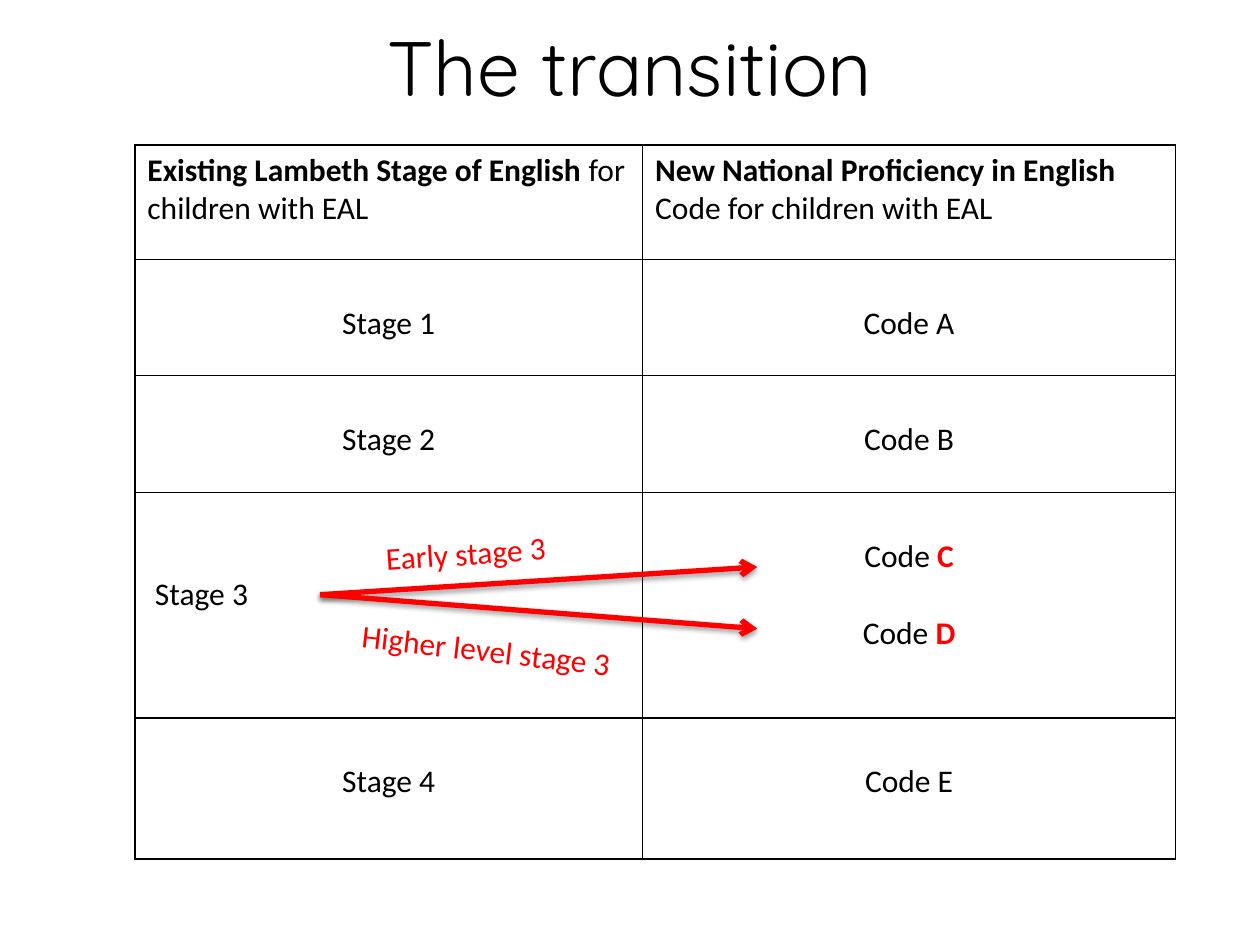
import pptx
import pptx.util
import pptx.oxml
import pptx.oxml.ns
import pptx.dml.color
import pptx.enum.shapes
import pptx.enum.text

Inches, Pt = pptx.util.Inches, pptx.util.Pt
CENTER = pptx.enum.text.PP_ALIGN.CENTER
LEFT = pptx.enum.text.PP_ALIGN.LEFT
COLORS = {"text": "000000", "accent": "FF0000"}
LINE = 0.305  # height of one line of body text, in inches


class Deck:
    def __init__(self, prs):
        self.s = prs.slides.add_slide(prs.slide_layouts[5])
        self.font, self.size = "Calibri", 18

    def xml(self, markup):
        """Parse a fragment whose root still needs the drawing namespace."""
        ns = pptx.oxml.ns.nsdecls("a")
        head, rest = markup.split(">", 1)
        if head.endswith("/"):
            return pptx.oxml.parse_xml(f"{head[:-1]} {ns}/>{rest}")
        return pptx.oxml.parse_xml(f"{head} {ns}>{rest}")

    def run(self, p, text, color="text", bold=False, font=None, size=None):
        r = p.add_run()
        r.text = text
        r.font.name = font or self.font
        r.font.size = Pt(size or self.size)
        r.font.bold = bold
        r.font.color.rgb = pptx.dml.color.RGBColor.from_string(COLORS[color])

    def title(self, text, x, y, w, h):
        sp = self.s.shapes.title
        sp.left, sp.top, sp.width, sp.height = map(Inches, (x, y, w, h))
        tf = sp.text_frame
        tf.vertical_anchor = pptx.enum.text.MSO_ANCHOR.MIDDLE
        tf.paragraphs[0].alignment = CENTER
        self.run(tf.paragraphs[0], text, font="Quicksand", size=44)

    def table(self, x, y, cols, rows):
        shape = self.s.shapes.add_table(
            len(rows), len(cols), Inches(x), Inches(y),
            Inches(sum(cols)), Inches(sum(rows)))
        table = shape.table
        table.first_row = table.horz_banding = False
        for col, width in zip(table.columns, cols):
            col.width = Inches(width)
        for row, height in zip(table.rows, rows):
            row.height = Inches(height)
        return table

    def cell(self, cell, paragraphs, align=CENTER, skip=1, left=0.1):
        """Fill a cell; each paragraph is a list of runs, one line apart."""
        tc_pr = cell._tc.get_or_add_tcPr()
        for side in "LRTB":
            tc_pr.append(self.xml(
                f'<a:ln{side} w="12700"><a:solidFill>'
                f'<a:srgbClr val="{COLORS["text"]}"/></a:solidFill></a:ln{side}>'))
        cell.fill.background()
        cell.margin_top = Inches(0.05 + skip * LINE)
        cell.margin_left = Inches(left)
        tf = cell.text_frame
        for i, runs in enumerate(paragraphs):
            p = tf.add_paragraph() if i else tf.paragraphs[0]
            p.alignment = align
            if i:
                p.space_before = Inches(LINE)
            for args in runs:
                self.run(p, *args)

    def arrow(self, x1, y1, x2, y2):
        line = self.s.shapes.add_connector(
            pptx.enum.shapes.MSO_CONNECTOR.STRAIGHT,
            Inches(x1), Inches(y1), Inches(x2), Inches(y2))
        line.line.width = Pt(3)
        line.line.color.rgb = pptx.dml.color.RGBColor.from_string(COLORS["accent"])
        line.line._get_or_add_ln().append(self.xml('<a:tailEnd type="arrow"/>'))
        line._element.spPr.append(self.xml(
            f'<a:effectLst><a:outerShdw blurRad="{Pt(3.1)}" dist="{Pt(1.6)}" '
            'dir="5400000" rotWithShape="0">'
            f'<a:srgbClr val="{COLORS["text"]}"><a:alpha val="38000"/></a:srgbClr>'
            '</a:outerShdw></a:effectLst>'))

    def label(self, text, x, y, w, h, rotation):
        sp = self.s.shapes.add_textbox(Inches(x), Inches(y), Inches(w), Inches(h))
        sp.rotation = rotation
        tf = sp.text_frame
        tf.word_wrap = True
        tf.auto_size = pptx.enum.text.MSO_AUTO_SIZE.SHAPE_TO_FIT_TEXT
        self.run(tf.paragraphs[0], text, "accent")


def main():
    prs = pptx.Presentation()
    prs.slide_width, prs.slide_height = Inches(10), Inches(7.5)
    deck = Deck(prs)
    deck.title("The transition", 0.5, -0.1, 9, 1.25)

    table = deck.table(1.07, 1.15, [4.03, 4.23], [0.91, 0.92, 0.93, 1.79, 1.12])
    headings = [("Existing Lambeth Stage of English ", "for children with EAL"),
                ("New National Proficiency in English ", "Code for children with EAL")]
    for c, (strong, plain) in enumerate(headings):
        deck.cell(table.cell(0, c), [[(strong, "text", True), (plain,)]], LEFT, skip=0)
    for r, stage, code in [(1, 1, "A"), (2, 2, "B"), (4, 4, "E")]:
        deck.cell(table.cell(r, 0), [[(f"Stage {stage}",)]])
        deck.cell(table.cell(r, 1), [[(f"Code {code}",)]])
    deck.cell(table.cell(3, 0), [[("Stage 3",)]], LEFT, skip=2, left=0.16)
    deck.cell(table.cell(3, 1),
              [[("Code",), (f" {code}", "accent", True)] for code in "CD"])

    for end_y in (4.5, 4.99):
        deck.arrow(2.54, 4.72, 6.01, end_y)
    deck.label("Early stage 3", 2.96, 4.16, 2.28, 0.4, 356.1)
    deck.label("Higher level stage 3", 2.77, 4.96, 2.28, 0.4, 6.5)
    prs.save("out.pptx")


if __name__ == "__main__":
    main()
